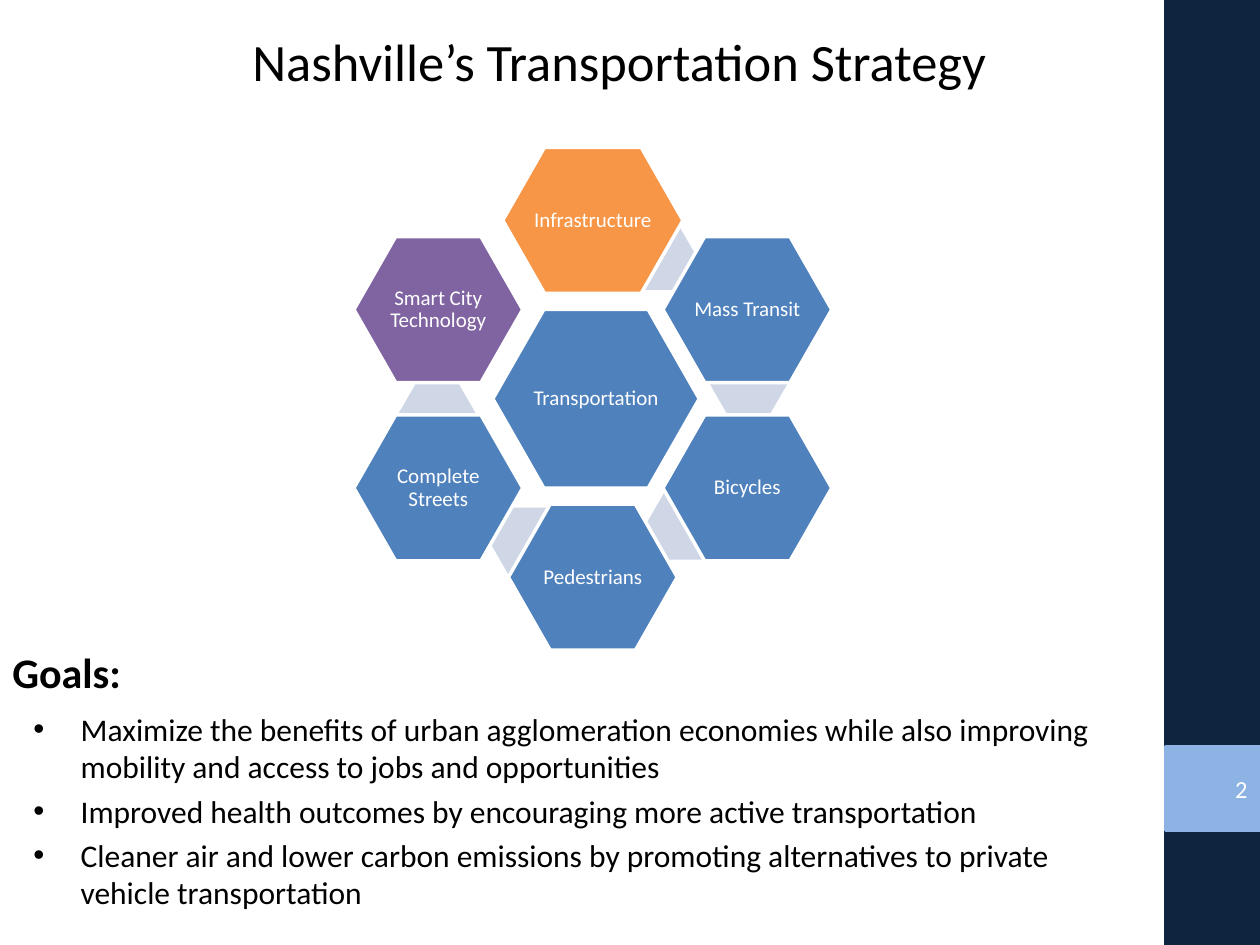
from math import cos, radians, sin

from lxml.etree import SubElement
from pptx import Presentation
from pptx.dml.color import RGBColor
from pptx.enum.shapes import MSO_SHAPE as Shape
from pptx.enum.text import MSO_ANCHOR as Anchor, PP_ALIGN as Align
from pptx.oxml.ns import qn
from pptx.util import Pt

NAVY, SKY, BLUE = "0F243E", "8CB3E3", "4F81BD"
PALE, WHITE, BLACK = "CFD7E7", "FFFFFF", "000000"
NODES = [
    ("Infrastructure", "F79646", 103),
    ("Mass Transit", BLUE, 96.5),
    ("Bicycles", BLUE, 96.5),
    ("Pedestrians", BLUE, 96.5),
    ("Complete Streets", BLUE, 96.5),
    ("Smart City Technology", "8064A2", 96.5),
]
GOALS = [
    "Maximize the benefits of urban agglomeration economies while also improving "
    "mobility and access to jobs and opportunities",
    "Improved health outcomes by encouraging more active transportation",
    "Cleaner air and lower carbon emissions by promoting alternatives to private "
    "vehicle transportation",
]


def color(code):
    return RGBColor.from_string(code)


def add_shape(slide, kind, box, fill, line=None):
    shape = slide.shapes.add_shape(kind, *map(Pt, box))
    shape.shadow.inherit = False
    shape.fill.solid()
    shape.fill.fore_color.rgb = color(fill)
    if line:
        shape.line.color.rgb = color(line)
        shape.line.width = Pt(2)
    else:
        shape.line.fill.background()
    return shape


def style(para, size, tint, bold=False):
    font = para.font
    font.name, font.size, font.bold = "Calibri", Pt(size), bold
    font.color.rgb = color(tint)


def add_text(slide, box, text, size, tint=BLACK, align=Align.LEFT,
             anchor=Anchor.MIDDLE, bold=False):
    frame = slide.shapes.add_textbox(*map(Pt, box)).text_frame
    frame.word_wrap = True
    frame.vertical_anchor = anchor
    para = frame.paragraphs[0]
    para.text, para.alignment = text, align
    style(para, size, tint, bold)


def add_hex(slide, mid, size, fill, text=None):
    (x, y), (w, h) = mid, size
    box = (x - w / 2, y - h / 2, w, h)
    shape = add_shape(slide, Shape.HEXAGON, box, fill, WHITE if text else None)
    shape.adjustments[0] = 0.286 if text else 0.289
    if text:
        frame = shape.text_frame
        frame.word_wrap = True
        frame.vertical_anchor = Anchor.MIDDLE
        frame.margin_left = frame.margin_right = Pt(1.2)
        frame.margin_top = frame.margin_bottom = Pt(1.2)
        para = frame.paragraphs[0]
        para.text, para.alignment, para.line_spacing = text, Align.CENTER, 0.9
        style(para, 12, WHITE)


def add_wheel(slide, box):
    left, top, wide, high = box
    x, y = left + wide / 2, top + high / 2
    tall = 83.5
    reach = (high - tall) / 2

    def spot(angle, dist):
        turn = radians(angle)
        return x + dist * sin(turn), y - dist * cos(turn)

    add_hex(slide, (x + 1.8, y), (118, 102.2), BLUE, "Transportation")
    for i, (name, fill, width) in enumerate(NODES):
        if i < 5:
            add_hex(slide, spot(60 * i + 24.4, 89.4), (44.6, 38.4), PALE)
        add_hex(slide, spot(60 * i, reach), (width, tall), fill, name)


def add_side(slide, box):
    left, top, wide, high = box
    add_shape(slide, Shape.RECTANGLE, box, NAVY, NAVY)
    add_shape(slide, Shape.RECTANGLE, (left, top + 426, wide, 48.2), SKY, SKY)
    add_text(slide, (left, top + 435.6, wide, 28.8), "2", 14, WHITE, Align.RIGHT)


def add_goals(slide, box):
    left, top, wide, high = box
    add_text(slide, (left, top, 318, 36), "Goals:", 24,
             anchor=Anchor.BOTTOM, bold=True)
    frame = slide.shapes.add_textbox(
        Pt(left + 12), Pt(top + 36), Pt(wide - 12), Pt(high - 36)).text_frame
    frame.word_wrap = True
    for i, goal in enumerate(GOALS):
        para = frame.add_paragraph() if i else frame.paragraphs[0]
        para.text = goal
        if i:
            para.space_before = Pt(3.6)
        props = para._p.get_or_add_pPr()
        props.set("marL", str(Pt(27)))
        props.set("indent", str(-Pt(27)))
        tint = SubElement(props, qn("a:buClr"))
        SubElement(tint, qn("a:srgbClr"), val=BLACK)
        SubElement(props, qn("a:buFont"), typeface="Arial")
        SubElement(props, qn("a:buChar"), char="•")
        style(para, 18, BLACK)


def main():
    deck = Presentation()
    deck.slide_width, deck.slide_height = Pt(720), Pt(540)
    slide = deck.slides.add_slide(deck.slide_layouts[6])
    add_side(slide, (666, 0.5, 54, 540))
    add_wheel(slide, (201.6, 84.2, 274.4, 287.4))
    add_text(slide, (30, 12, 648, 45), "Nashville’s Transportation Strategy", 30,
             align=Align.CENTER)
    add_goals(slide, (0, 366, 636, 174))
    deck.save("out.pptx")


if __name__ == "__main__":
    main()
